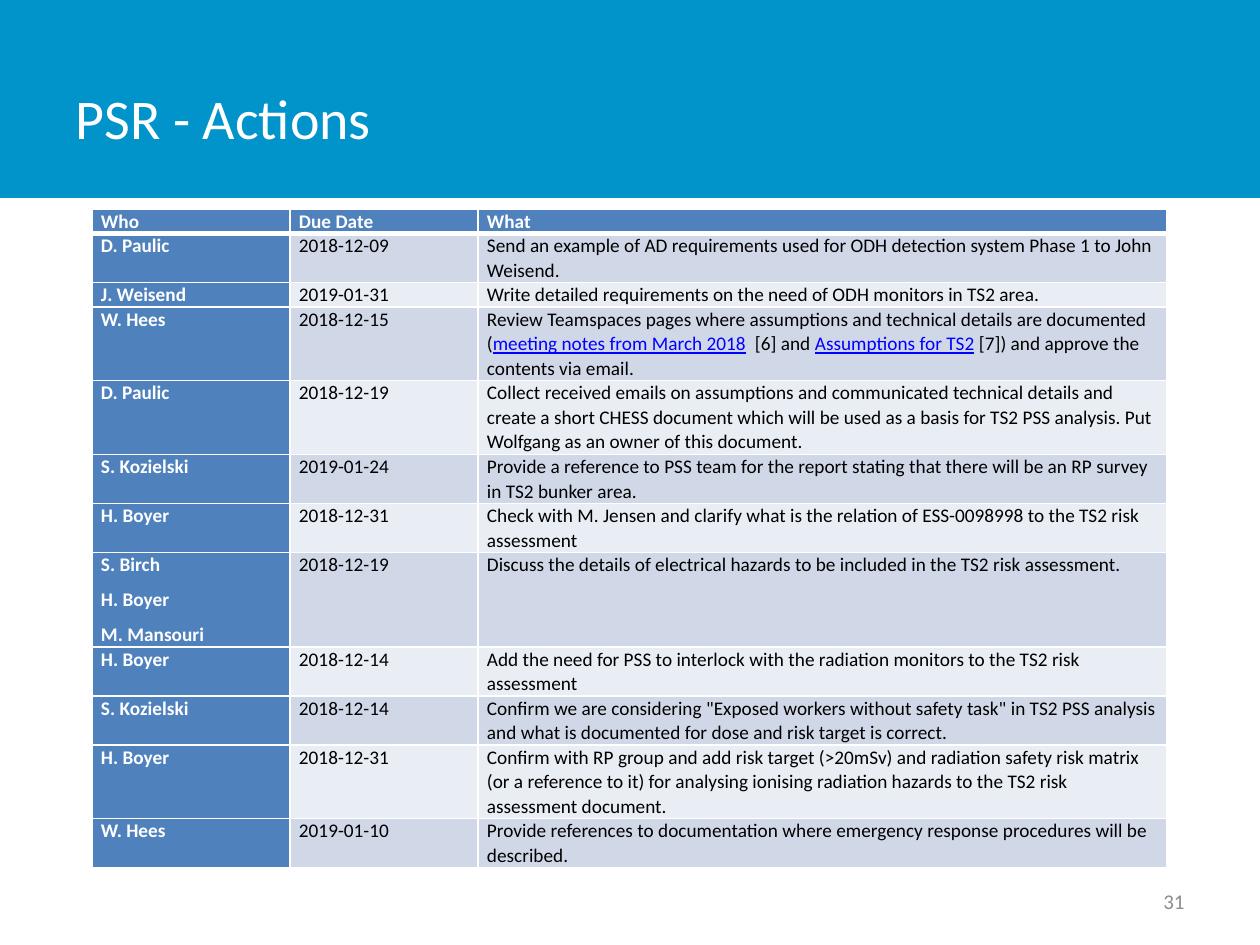
from lxml.etree import SubElement
from pptx import Presentation
from pptx.dml.color import RGBColor
from pptx.enum.shapes import MSO_SHAPE
from pptx.enum.text import MSO_ANCHOR, PP_ALIGN
from pptx.oxml.ns import qn
from pptx.util import Emu, Pt

PX_PER_INCH = 126
LINE_HEIGHT = 23
COLUMN_WIDTHS = (198, 188, 689)
HEADER = ("Who", "Due Date", "What")
LINK = {"underline": True}
BODY = {"name": "Calibri", "size": Pt(11), "bold": False}
BOLD = {**BODY, "bold": True}
ACTIONS = [
    ("D. Paulic", "2018-12-09", 2, "Send an example of AD requirements used for ODH detection system "
     "Phase 1 to John Weisend."),
    ("J. Weisend", "2019-01-31", 1, "Write detailed requirements on the need of ODH monitors in TS2 area."),
    ("W. Hees", "2018-12-15", 3, [
        ("Review Teamspaces pages where assumptions and technical details are documented (", {}),
        ("meeting notes from March 2018", LINK),
        ("  [6] and ", {}),
        ("Assumptions for TS2", LINK),
        (" [7]) and approve the contents via email.", {})]),
    ("D. Paulic", "2018-12-19", 3, "Collect received emails on assumptions and communicated technical "
     "details and create a short CHESS document which will be used as a basis for TS2 PSS analysis. "
     "Put Wolfgang as an owner of this document."),
    ("S. Kozielski", "2019-01-24", 2, "Provide a reference to PSS team for the report stating that there "
     "will be an RP survey in TS2 bunker area."),
    ("H. Boyer", "2018-12-31", 2, "Check with M. Jensen and clarify what is the relation of ESS-0098998 "
     "to the TS2 risk assessment"),
    ("S. Birch\nH. Boyer\nM. Mansouri", "2018-12-19", 3, "Discuss the details of electrical hazards to be "
     "included in the TS2 risk assessment."),
    ("H. Boyer", "2018-12-14", 2, "Add the need for PSS to interlock with the radiation monitors to the "
     "TS2 risk assessment"),
    ("S. Kozielski", "2018-12-14", 2, "Confirm we are considering \"Exposed workers without safety task\" "
     "in TS2 PSS analysis and what is documented for dose and risk target is correct."),
    ("H. Boyer", "2018-12-31", 3, "Confirm with RP group and add risk target (>20mSv) and radiation safety "
     "risk matrix (or a reference to it) for analysing ionising radiation hazards to the TS2 risk "
     "assessment document."),
    ("W. Hees", "2019-01-10", 2, "Provide references to documentation where emergency response procedures "
     "will be described."),
]


def px(length):
    """Turn pixels into EMU."""
    return Emu(round(length * 914400 / PX_PER_INCH))


def color(value):
    """Turn a hex string into a colour."""
    return RGBColor.from_string(value)


def apply_format(target, values):
    """Set every attribute named in a dict of format values."""
    for name, value in values.items():
        setattr(target, name, value)


def add_run(paragraph, text, font_color, values):
    """Append one formatted run."""
    run = paragraph.add_run()
    run.text = text
    apply_format(run.font, values)
    run.font.color.rgb = color(font_color)


def add_label(slide, box, text, font_color, size, alignment):
    """Place one line of text, centred vertically in its box."""
    frame = slide.shapes.add_textbox(*map(px, box)).text_frame
    apply_format(frame, {"word_wrap": True, "vertical_anchor": MSO_ANCHOR.MIDDLE})
    paragraph = frame.paragraphs[0]
    paragraph.alignment = alignment
    add_run(paragraph, text, font_color, {"name": "Calibri", "size": Pt(size)})


def add_title_band(slide, box):
    """Draw the blue band with the slide title."""
    left, top, width, height = box
    band = slide.shapes.add_shape(MSO_SHAPE.RECTANGLE, *map(px, box))
    band.shadow.inherit = False
    band.fill.solid()
    band.fill.fore_color.rgb = color("0094CA")
    band.line.fill.background()
    title_box = (left + 63, top + 38, width - 276, height - 40)
    add_label(slide, title_box, "PSR - Actions", "FFFFFF", 32, PP_ALIGN.LEFT)


def set_borders(cell, top, bottom):
    """Give a cell white borders, with top and bottom widths in points."""
    properties = cell._tc.get_or_add_tcPr()
    for side, width in (("L", 1), ("R", 1), ("T", top), ("B", bottom)):
        line = SubElement(properties, qn(f"a:ln{side}"), w=str(Pt(width)))
        fill = SubElement(line, qn("a:solidFill"))
        SubElement(fill, qn("a:srgbClr"), val="FFFFFF")


def fill_cell(cell, content, row, fill, font_color, font):
    """Write and style one cell; content is text or a list of runs."""
    set_borders(cell, 3 if row == 1 else 1, 3 if row == 0 else 1)
    cell.fill.solid()
    cell.fill.fore_color.rgb = color(fill)
    apply_format(cell, {"margin_left": px(9), "margin_right": px(9), "margin_top": 0, "margin_bottom": 0})
    if isinstance(content, str):
        lines = [[(text, {})] for text in content.split("\n")]
    else:
        lines = [content]
    frame = cell.text_frame
    for index, runs in enumerate(lines):
        paragraph = frame.add_paragraph() if index else frame.paragraphs[0]
        apply_format(paragraph, {"line_spacing": Pt(14), "space_after": Pt(6 if len(lines) > 1 else 12)})
        for text, extra in runs:
            add_run(paragraph, text, "0000FF" if extra else font_color, {**font, **extra})


def add_action_table(slide, left, top):
    """Place the table of actions with its corner at left, top."""
    line_counts = [1] + [action[2] for action in ACTIONS]
    rows = [HEADER] + [(who, due, what) for who, due, _, what in ACTIONS]
    box = (left, top, sum(COLUMN_WIDTHS), LINE_HEIGHT * sum(line_counts))
    table = slide.shapes.add_table(len(rows), len(HEADER), *map(px, box)).table
    for column, width in zip(table.columns, COLUMN_WIDTHS):
        column.width = px(width)
    for row, (contents, count) in enumerate(zip(rows, line_counts)):
        table.rows[row].height = px(LINE_HEIGHT * count)
        for column, content in enumerate(contents):
            if row == 0 or column == 0:
                style = ("4F81BD", "FFFFFF", BOLD)
            else:
                style = ("D0D8E8" if row % 2 else "E9EDF4", "000000", BODY)
            fill_cell(table.cell(row, column), content, row, *style)


def main():
    """Build the slide and save it."""
    presentation = Presentation()
    apply_format(presentation, {"slide_width": px(1260), "slide_height": px(945)})
    slide = presentation.slides.add_slide(presentation.slide_layouts[6])
    add_title_band(slide, (0, 0, 1260, 198))
    add_action_table(slide, 92, 209)
    add_label(slide, (903, 876, 294, 50), "31", "8C8C8C", 12, PP_ALIGN.RIGHT)
    presentation.save("out.pptx")


if __name__ == "__main__":
    main()
